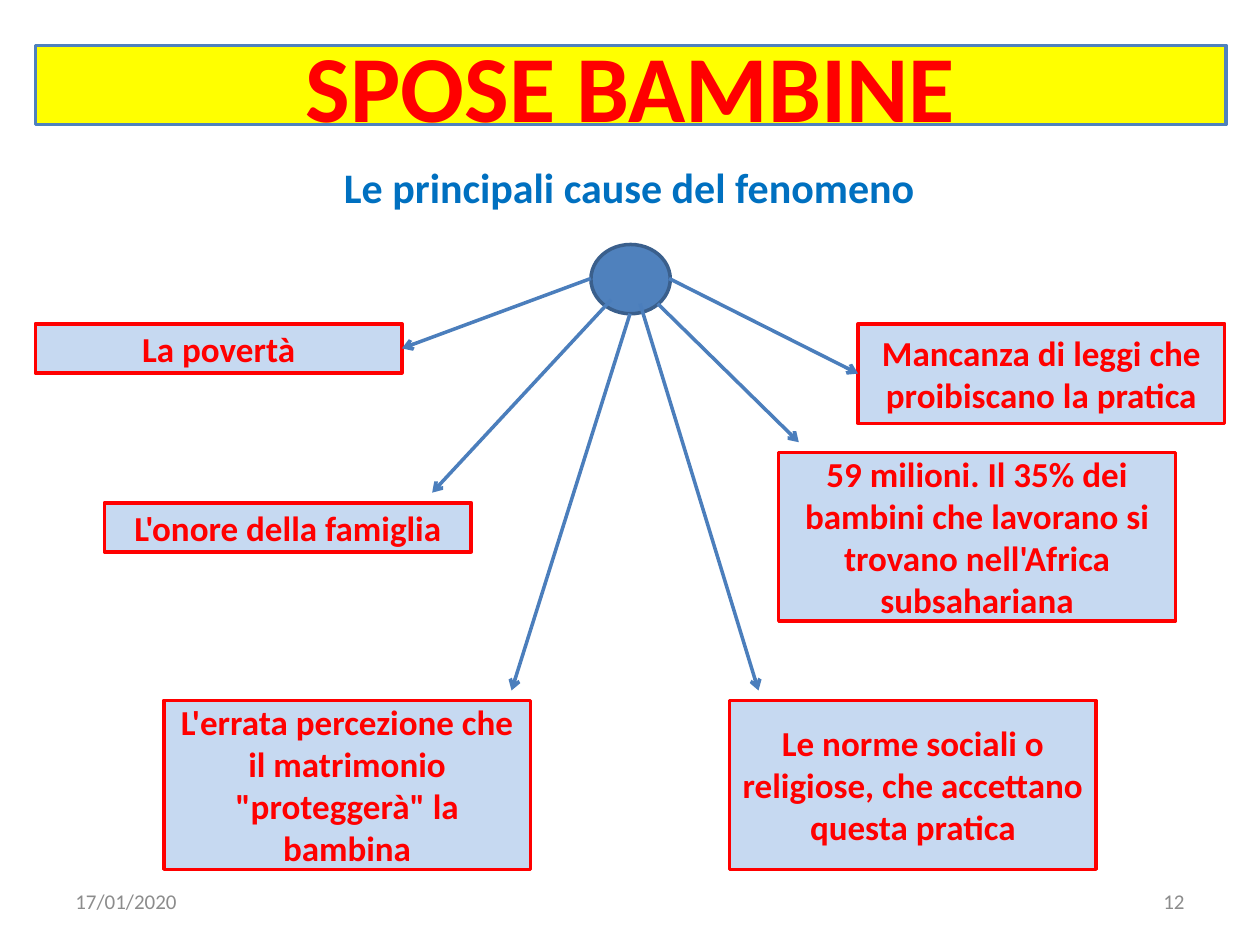
from lxml import etree
from pptx import Presentation
from pptx.dml.color import RGBColor
from pptx.enum.shapes import MSO_CONNECTOR, MSO_SHAPE
from pptx.enum.text import MSO_ANCHOR, PP_ALIGN
from pptx.oxml.ns import qn
from pptx.util import Inches, Pt

YELLOW = RGBColor(0xFF, 0xFF, 0x00)
RED = RGBColor(0xFF, 0x00, 0x00)
BLUE = RGBColor(0x4F, 0x81, 0xBD)
DARK_BLUE = RGBColor(0x3A, 0x5F, 0x8C)
ARROW_BLUE = RGBColor(0x4B, 0x7E, 0xBC)
PALE_BLUE = RGBColor(0xC6, 0xD9, 0xF1)
SUBTITLE_BLUE = RGBColor(0x00, 0x70, 0xC0)
GREY = RGBColor(0x8C, 0x8C, 0x8C)

FONT = "Calibri"
LINE_WIDTH = Pt(2)
CAUSE_WIDTH = 2.91

# text, (left, top, width, height), arrow start, arrow end, side joined
CAUSES = [
    ("La povertà", (0.28, 2.57, CAUSE_WIDTH, 0.39),
     (4.69, 2.21), (3.19, 2.77), 3),
    ("L'onore della famiglia", (0.83, 3.99, CAUSE_WIDTH, 0.39),
     (4.85, 2.38), (3.43, 3.91), None),
    ("L'errata percezione che il matrimonio \"proteggerà\" la bambina",
     (1.3, 5.56, CAUSE_WIDTH, 1.34), (5, 2.49), (4.06, 5.48), None),
    ("Le norme sociali o religiose, che accettano questa pratica",
     (5.79, 5.56, CAUSE_WIDTH, 1.34), (5.08, 2.41), (6.02, 5.48), None),
    ("59 milioni. Il 35% dei bambini che lavorano si trovano "
     "nell'Africa subsahariana",
     (6.18, 3.59, 3.15, 1.34), (5.22, 2.41), (6.34, 3.51), None),
    ("Mancanza di leggi che proibiscano la pratica",
     (6.81, 2.57, CAUSE_WIDTH, 0.79), (5.31, 2.21), (6.81, 2.96), 1),
]


def inches(values):
    return [Inches(value) for value in values]


def write_text(shape, text, size, color, bold=True, align=PP_ALIGN.CENTER,
               anchor=MSO_ANCHOR.MIDDLE):
    frame = shape.text_frame
    frame.word_wrap = True
    frame.vertical_anchor = anchor
    paragraph = frame.paragraphs[0]
    paragraph.alignment = align
    run = paragraph.add_run()
    run.text = text
    run.font.name = FONT
    run.font.size = Pt(size)
    run.font.bold = bold
    run.font.color.rgb = color


def add_filled_shape(slide, kind, box, fill, line):
    shape = slide.shapes.add_shape(kind, *inches(box))
    shape.shadow.inherit = False
    shape.fill.solid()
    shape.fill.fore_color.rgb = fill
    shape.line.color.rgb = line
    shape.line.width = LINE_WIDTH
    return shape


def add_label(slide, box, text, **text_format):
    write_text(slide.shapes.add_textbox(*inches(box)), text, **text_format)


def add_arrow(slide, start, end, target, side):
    """Draw an open-headed arrow, joined to the target if a side is given."""
    arrow = slide.shapes.add_connector(
        MSO_CONNECTOR.STRAIGHT, *inches(start + end))
    if side is not None:
        arrow.end_connect(target, side)
    arrow.line.color.rgb = ARROW_BLUE
    arrow.line.width = LINE_WIDTH
    properties = arrow.line._get_or_add_ln()
    etree.SubElement(properties, qn("a:tailEnd"), type="arrow")
    etree.SubElement(properties.getparent(), qn("a:effectLst"))


def main():
    presentation = Presentation()
    presentation.slide_width = Inches(10)
    presentation.slide_height = Inches(7.5)
    slide = presentation.slides.add_slide(presentation.slide_layouts[6])

    title = add_filled_shape(slide, MSO_SHAPE.RECTANGLE,
                             (0.28, 0.36, 9.45, 0.63), YELLOW, BLUE)
    write_text(title, "SPOSE BAMBINE", size=54, color=RED)
    add_label(slide, (0.5, 6.95, 2.33, 0.4), "17/01/2020", size=12,
              color=GREY, bold=False, align=PP_ALIGN.LEFT)
    add_label(slide, (7.17, 6.95, 2.33, 0.4), "12", size=12,
              color=GREY, bold=False, align=PP_ALIGN.RIGHT)
    add_label(slide, (1.06, 1.23, 7.87, 0.5),
              "Le principali cause del fenomeno", size=24,
              color=SUBTITLE_BLUE, anchor=MSO_ANCHOR.TOP)

    cause_boxes = []
    for text, box, *_ in CAUSES:
        cause_box = add_filled_shape(slide, MSO_SHAPE.RECTANGLE, box,
                                     PALE_BLUE, RED)
        write_text(cause_box, text, size=20, color=RED)
        cause_boxes.append(cause_box)

    add_filled_shape(slide, MSO_SHAPE.OVAL, (4.69, 1.94, 0.63, 0.55),
                     BLUE, DARK_BLUE)
    for cause_box, (_, _, start, end, side) in zip(cause_boxes, CAUSES):
        add_arrow(slide, start, end, cause_box, side)

    presentation.save("out.pptx")


if __name__ == "__main__":
    main()
